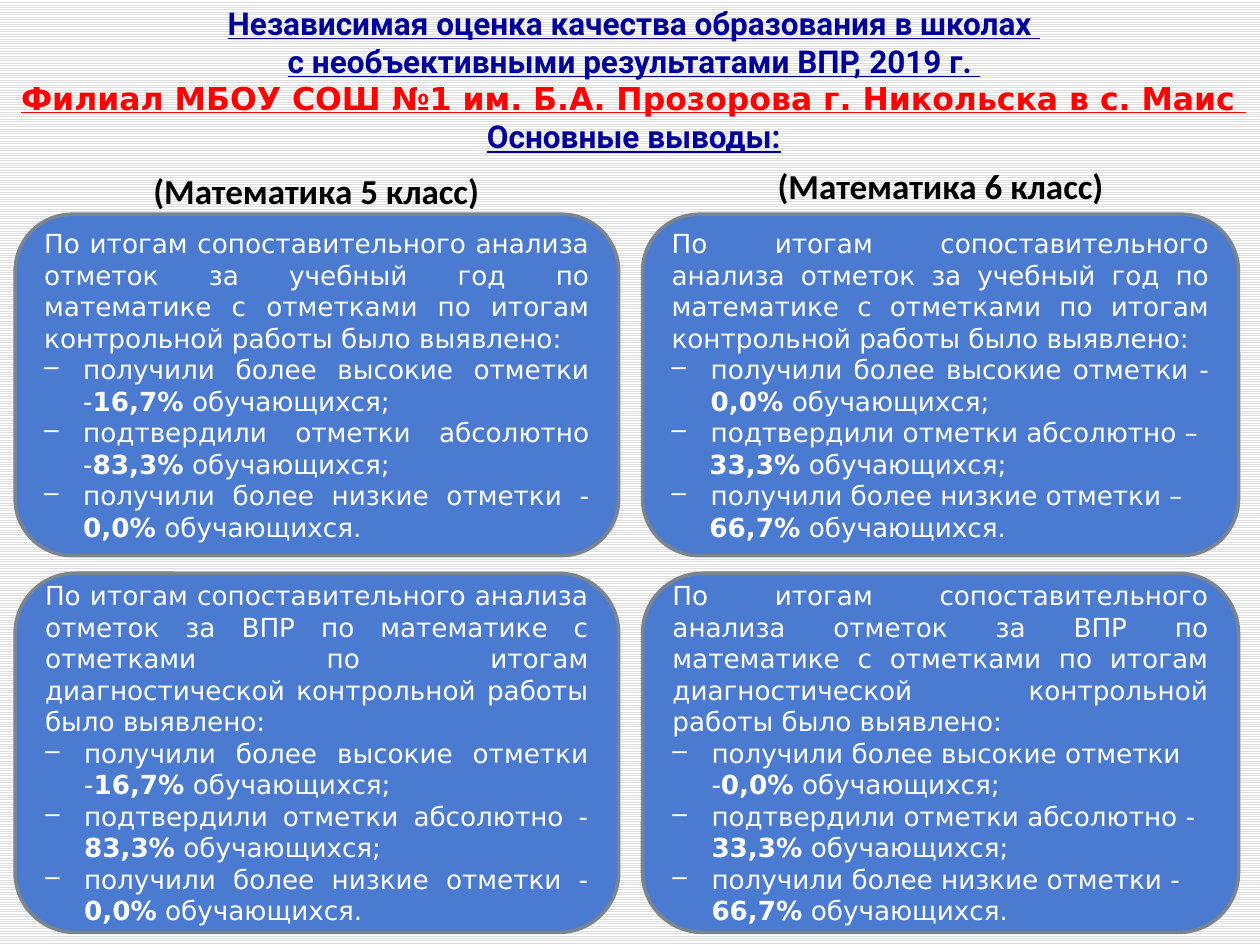
"""Build the slide with the findings of the maths checks for grades 5 and 6."""
from dataclasses import dataclass

from lxml.etree import SubElement
from pptx import Presentation
from pptx.dml.color import RGBColor
from pptx.enum.dml import MSO_PATTERN
from pptx.enum.shapes import MSO_SHAPE
from pptx.enum.text import MSO_ANCHOR, PP_ALIGN
from pptx.oxml.ns import qn
from pptx.slide import Slide
from pptx.text.text import TextFrame
from pptx.util import Emu, Pt

PX = 9144
NAVY = RGBColor(0x00, 0x00, 0x99)
RED = RGBColor(0xFF, 0x00, 0x00)
BLACK = RGBColor(0x00, 0x00, 0x00)
WHITE = RGBColor(0xFF, 0xFF, 0xFF)
BLUE = RGBColor(0x4B, 0x7B, 0xD0)
GREY = RGBColor(0x79, 0x84, 0x8F)
STRIPE = RGBColor(0xDD, 0xDD, 0xDD)

SANS = "DejaVu Sans"
YEAR = ("По итогам сопоставительного анализа отметок за учебный год по математике "
        "с отметками по итогам контрольной работы было выявлено:")
TEST = ("По итогам сопоставительного анализа отметок за ВПР по математике "
        "с отметками по итогам диагностической контрольной работы было выявлено:")
LEADS = ("получили более высокие отметки ", "подтвердили отметки абсолютно ",
         "получили более низкие отметки ")
ENDS = (" обучающихся;", " обучающихся;", " обучающихся.")


@dataclass(frozen=True)
class Box:
    x: int
    y: int
    w: int
    h: int

    def emu(self) -> list[Emu]:
        return [Emu(n * PX) for n in (self.x, self.y, self.w, self.h)]


@dataclass(frozen=True)
class Share:
    dash: str
    value: str
    split: bool = False


@dataclass(frozen=True)
class Card:
    box: Box
    intro: str
    shares: tuple[Share, ...]
    align: PP_ALIGN = PP_ALIGN.JUSTIFY


@dataclass(frozen=True)
class Label:
    box: Box
    text: str


TITLE = Box(-3, -19, 1012, 147)
LINES = (
    ("Независимая оценка качества образования в школах ", "Roboto", NAVY),
    ("с необъективными результатами ВПР, 2019 г. ", "Roboto", NAVY),
    ("Филиал МБОУ СОШ №1 им. Б.А. Прозорова г. Никольска в с. Маис ", SANS, RED),
    ("Основные выводы:", "Roboto", NAVY),
)
LABELS = (
    Label(Box(102, 119, 298, 68), "(Математика 5 класс)"),
    Label(Box(601, 119, 291, 60), "(Математика 6 класс)"),
)
CARDS = (
    Card(Box(12, 170, 479, 271), YEAR,
         (Share("-", "16,7%"), Share("-", "83,3%"), Share("- ", "0,0%"))),
    Card(Box(12, 455, 479, 285), TEST,
         (Share("-", "16,7%"), Share("- ", "83,3%"), Share("- ", "0,0%"))),
    Card(Box(510, 170, 473, 271), YEAR,
         (Share("- ", "0,0%"), Share("– ", "33,3%", True), Share("– ", "66,7%", True))),
    Card(Box(510, 455, 473, 285), TEST,
         (Share("-", "0,0%"), Share("- ", "33,3%"), Share("- ", "66,7%")), PP_ALIGN.LEFT),
)


def add_text(slide: Slide, box: Box, text: str, anchor: MSO_ANCHOR) -> TextFrame:
    """Add a wrapped, centred text box."""
    frame = slide.shapes.add_textbox(*box.emu()).text_frame
    frame.word_wrap = True
    frame.vertical_anchor = anchor
    frame.paragraphs[0].text = text
    frame.paragraphs[0].alignment = PP_ALIGN.CENTER
    return frame


def add_title(slide: Slide) -> None:
    """Add the underlined title, one style per line."""
    text = "\v".join(line[0] for line in LINES)
    para = add_text(slide, TITLE, text, MSO_ANCHOR.BOTTOM).paragraphs[0]
    for run, (_, face, color) in zip(para.runs, LINES):
        font = run.font
        font.name, font.size = face, Pt(18)
        font.bold = font.underline = True
        font.color.rgb = color


def add_label(slide: Slide, label: Label) -> None:
    """Add the heading of a column."""
    para = add_text(slide, label.box, label.text, MSO_ANCHOR.MIDDLE).paragraphs[0]
    para.line_spacing = 0.9
    font = para.runs[0].font
    font.name, font.size, font.bold = "Calibri", Pt(20), True
    font.color.rgb = BLACK


def add_para(frame: TextFrame, align: PP_ALIGN, parts: tuple[str, ...],
             left: int, hang: int) -> None:
    """Add an indented line, bulleted if it hangs, with percentages in bold."""
    para = frame.add_paragraph()
    para.alignment = align
    props = para._p.get_or_add_pPr()
    props.set("marL", str(left * PX))
    props.set("indent", str(-hang * PX))
    if hang:
        SubElement(props, qn("a:buChar")).set("char", "–")
    for part in parts:
        run = para.add_run()
        run.text = part
        run.font.bold = part.endswith("%")


def add_card(slide: Slide, card: Card) -> None:
    """Add a rounded card with its intro and three findings."""
    shape = slide.shapes.add_shape(MSO_SHAPE.ROUNDED_RECTANGLE, *card.box.emu())
    shape.shadow.inherit = False
    shape.fill.solid()
    shape.fill.fore_color.rgb = BLUE
    shape.line.color.rgb = GREY
    shape.line.width = Pt(2)
    frame = shape.text_frame
    frame.word_wrap = True
    frame.vertical_anchor = MSO_ANCHOR.MIDDLE
    frame.text = card.intro
    frame.paragraphs[0].alignment = PP_ALIGN.JUSTIFY
    for lead, share, end in zip(LEADS, card.shares, ENDS):
        head, tail = (lead + share.dash,), (share.value, end)
        if share.split:
            add_para(frame, card.align, head, 31, 31)
            add_para(frame, card.align, tail, 30, 0)
        else:
            add_para(frame, card.align, head + tail, 31, 31)
    for para in frame.paragraphs:
        for run in para.runs:
            run.font.name, run.font.size = SANS, Pt(15)
            run.font.color.rgb = WHITE


def main() -> None:
    """Draw the whole slide and save it."""
    deck = Presentation()
    deck.slide_width, deck.slide_height = Emu(1000 * PX), Emu(750 * PX)
    slide = deck.slides.add_slide(deck.slide_layouts[6])
    fill = slide.background.fill
    fill.patterned()
    fill.pattern = MSO_PATTERN.LIGHT_HORIZONTAL
    fill.fore_color.rgb = STRIPE
    fill.back_color.rgb = WHITE
    add_title(slide)
    for card in CARDS:
        add_card(slide, card)
    for label in LABELS:
        add_label(slide, label)
    deck.save("out.pptx")


if __name__ == "__main__":
    main()
